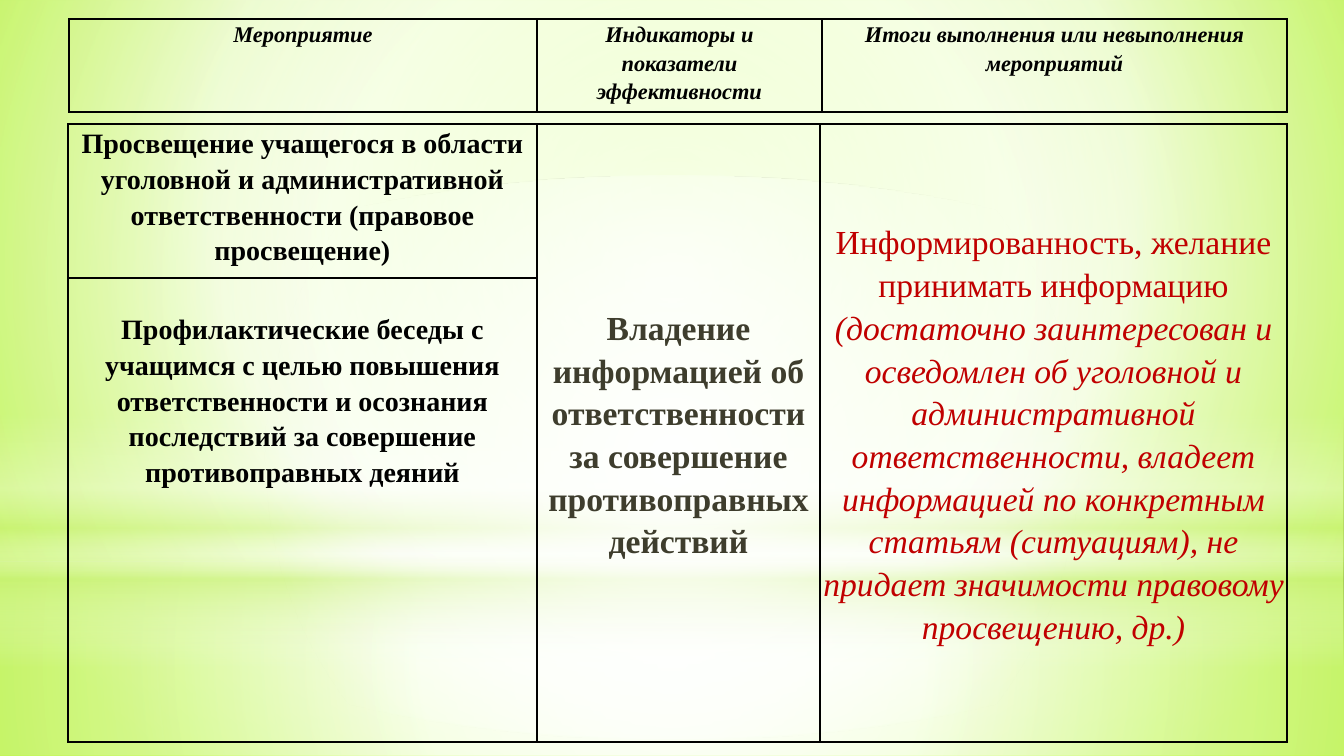
from lxml import etree
from pptx import Presentation, util as u
from pptx.dml.color import RGBColor
from pptx.enum import shapes, text
from pptx.oxml import parse_xml
from pptx.oxml.ns import nsdecls, qn

FONT = "Times New Roman"
BLACK, OLIVE, RED = "000000", "3E3D2D", "C00000"
color = RGBColor.from_string


def px(length):
    return u.Emu(length * 63500 // 7)


def set_gradient(fill, element, stops, focus=None):
    """Stops are (percent, colour, opacity); without a focus the fill runs downwards."""
    fill.gradient()
    gradient = parse_xml(f'<a:gradFill {nsdecls("a")} rotWithShape="1"><a:gsLst/></a:gradFill>')
    for position, hex_color, opacity in stops:
        stop = etree.SubElement(gradient[0], qn("a:gs"), pos=str(position * 1000))
        tint = etree.SubElement(stop, qn("a:srgbClr"), val=hex_color)
        if opacity < 100:
            etree.SubElement(tint, qn("a:alpha"), val=str(opacity * 1000))
    if focus:
        circle = etree.SubElement(gradient, qn("a:path"), path="circle")
        sides = {side: str(value * 1000) for side, value in zip("ltrb", focus)}
        etree.SubElement(circle, qn("a:fillToRect"), **sides)
    else:
        etree.SubElement(gradient, qn("a:lin"), ang="5400000", scaled="0")
    default = next(element.iter(qn("a:gradFill")))
    default.getparent().replace(default, gradient)


presentation = Presentation()
presentation.slide_width, presentation.slide_height = px(1344), px(756)
slide = presentation.slides.add_slide(presentation.slide_layouts[6])

# Background
set_gradient(slide.background.fill, slide.element,
             [(0, "CAFF60", 100), (60, "F7FFE7", 100), (100, "B7FF29", 100)], (20, 10, 20, 60))

# Full-width glow layers: shape kind, top, height, stops, focus
CENTER = (50, 50, 50, 50)
RECTANGLE, OVAL = shapes.MSO_SHAPE.RECTANGLE, shapes.MSO_SHAPE.OVAL
glows = [
    (RECTANGLE, 562, 194, [(0, "FFFFFF", 91), (37, "FFFFFF", 76), (100, "CAF278", 79)], CENTER),
    (RECTANGLE, 0, 562, [(0, "FFFFFF", 89), (48, "FFFFFF", 62), (100, "CAF278", 79)], CENTER),
    (RECTANGLE, 415, 252, [(0, "FFFFFF", 0), (29, "FFFFFF", 30), (45, "CAF278", 40),
                           (55, "FFFFFF", 26), (65, "CAF278", 60), (100, "FFFFFF", 0)], None),
    (OVAL, 176, 562, [(0, "FFFFFF", 100), (56, "FFFFFF", 0)], CENTER),
]
for kind, top, height, stops, focus in glows:
    shape = slide.shapes.add_shape(kind, 0, px(top), px(1344), px(height))
    shape.shadow.inherit = False
    shape.line.fill.background()
    set_gradient(shape.fill, shape.element, stops, focus)

# Cell contents: row, column, paragraphs of runs, size, colour, bold, italic per run
header_cells = [
    (0, 0, [["Мероприятие"]], 16, BLACK, True, [True]),
    (0, 1, [["Индикаторы и"], ["показатели эффективности"]], 16, BLACK, True, [True]),
    (0, 2, [["Итоги выполнения или невыполнения мероприятий"]], 16, BLACK, True, [True]),
]
body_cells = [
    (0, 0, [["Просвещение учащегося в области уголовной и административной "
             "ответственности (правовое просвещение)"]], 20, BLACK, True, [False]),
    (1, 0, [["Профилактические беседы с учащимся с целью повышения ответственности "
             "и осознания последствий за совершение противоправных деяний"]],
     20, BLACK, True, [False]),
    (0, 1, [["Владение информацией об ответственности за совершение "
             "противоправных действий"]], 24, OLIVE, True, [False]),
    (0, 2, [["Информированность, желание принимать информацию ",
             "(достаточно заинтересован и осведомлен об уголовной и административной "
             "ответственности, владеет информацией по конкретным статьям (ситуациям), "
             "не придает значимости правовому просвещению, др.)"]],
     24, RED, False, [False, True]),
]

# Tables: left, top, column widths, row heights, side margin, cells
tables = [
    (68, 124, [469, 283, 467], [154, 464], 3, body_cells),
    (69, 19, [468, 285, 465], [93], 4, header_cells),
]
for left, top, widths, heights, margin, contents in tables:
    table = slide.shapes.add_table(len(heights), len(widths), px(left), px(top),
                                   px(sum(widths)), px(sum(heights))).table
    table.first_row = table.horz_banding = False
    for column, width in zip(table.columns, widths):
        column.width = px(width)
    for row, height in zip(table.rows, heights):
        row.height = px(height)

    # Thin black borders and no fill
    for cell in table.iter_cells():
        cell.margin_left = cell.margin_right = px(margin)
        cell.margin_top = cell.margin_bottom = 0
        properties = cell._tc.get_or_add_tcPr()
        for side in ("lnL", "lnR", "lnT", "lnB"):
            properties.append(parse_xml(
                f'<a:{side} {nsdecls("a")} w="12700"><a:solidFill>'
                f'<a:srgbClr val="{BLACK}"/></a:solidFill></a:{side}>'))
        cell.fill.background()

    # The result columns span both body rows
    if len(heights) > 1:
        table.cell(1, 0).margin_top = px(32)
        for column in (1, 2):
            table.cell(0, column).merge(table.cell(1, column))
            table.cell(0, column).vertical_anchor = text.MSO_ANCHOR.MIDDLE

    for row, column, paragraphs, size, hex_color, bold, italics in contents:
        frame = table.cell(row, column).text_frame
        frame.text = "\n".join(runs[0] for runs in paragraphs)
        for paragraph, runs in zip(frame.paragraphs, paragraphs):
            paragraph.alignment = text.PP_ALIGN.CENTER
            paragraph.line_spacing = 1.15
            for extra in runs[1:]:
                paragraph.add_run().text = extra
            for run, italic in zip(paragraph.runs, italics):
                run.font.name, run.font.size = FONT, u.Pt(size)
                run.font.bold, run.font.italic = bold, italic
                run.font.color.rgb = color(hex_color)

presentation.save("out.pptx")
